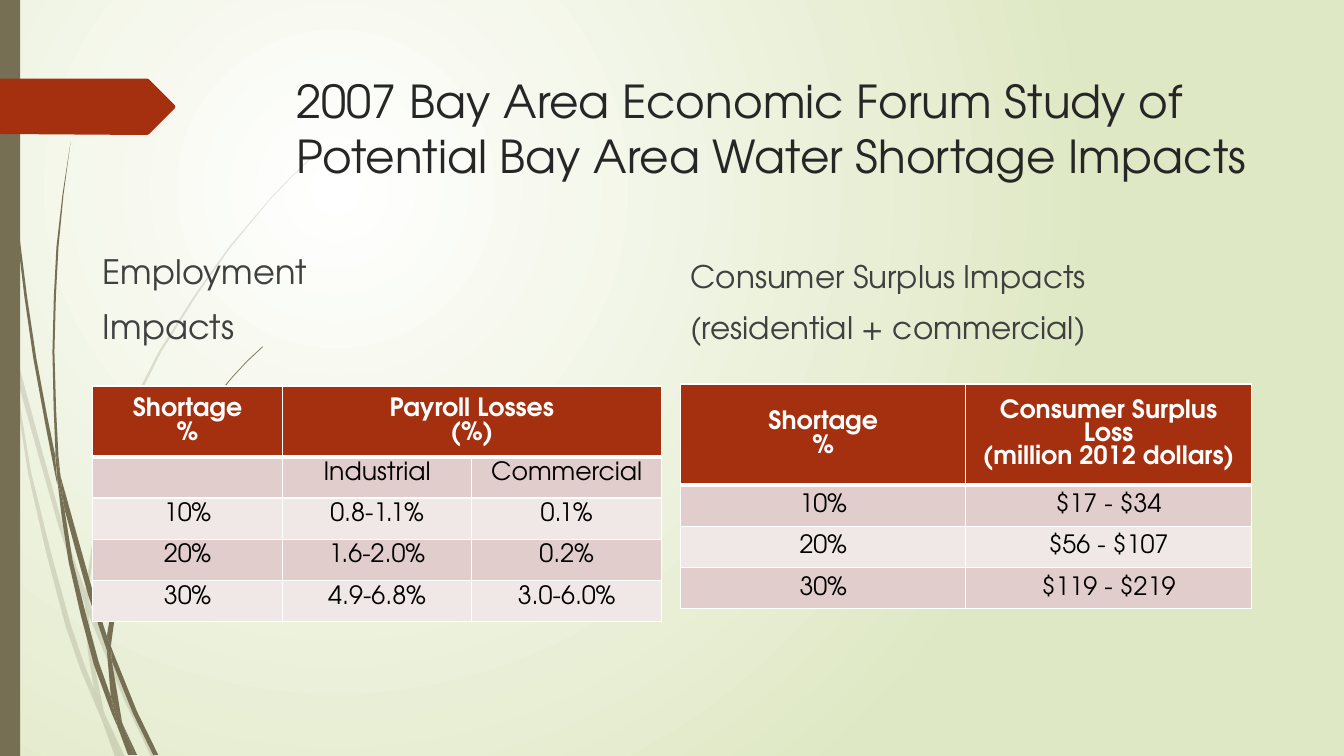
from dataclasses import dataclass
from lxml.etree import SubElement
from pptx import Presentation
from pptx.dml.color import RGBColor
from pptx.enum.text import MSO_ANCHOR, MSO_AUTO_SIZE, PP_ALIGN
from pptx.enum.shapes import MSO_SHAPE
from pptx.oxml import parse_xml
from pptx.oxml.ns import nsdecls, qn
from pptx.slide import Slide
from pptx.text.text import TextFrame
from pptx.util import Inches, Pt

FONT = "TeX Gyre Adventor"
WHITE = RGBColor(0xFF, 0xFF, 0xFF)
BLACK = RGBColor(0, 0, 0)
PALE_GREEN = RGBColor(0xDF, 0xE8, 0xC4)
OLIVE = RGBColor(0x76, 0x6F, 0x54)
RUST = RGBColor(0xA5, 0x30, 0x10)
TITLE_GRAY = RGBColor(0x26, 0x26, 0x26)
TEXT_GRAY = RGBColor(0x40, 0x40, 0x40)
BANDS = (RGBColor(0xF0, 0xE8, 0xE7), RGBColor(0xE1, 0xCD, 0xCC))

Point = tuple[float, float]


@dataclass
class Strand:
    """A grass piece: one edge out, the other edge back."""
    out: list[Point]
    back: list[Point]


@dataclass
class Panel:
    """A heading with the table below it."""
    heading: list[str]
    heading_size: float
    left: float
    top: float
    column_width: float
    header_height: float
    body_anchor: MSO_ANCHOR
    rows: list[list[str]]
    merge_last_headers: bool = False


FAINT_STRANDS = [
    Strand([(0.11, 3.5), (0.09, 3.22), (0, 2.82)], [(0, 2.99), (0.1, 3.44)]),
    Strand([(0.17, 3.76), (0.58, 5.22), (0.84, 5.99)], [(0.85, 5.86), (0.62, 5.2), (0.14, 3.45)]),
    Strand([(0.88, 6.1), (1.23, 6.94), (1.5, 7.51)],
           [(1.55, 7.51), (1.27, 6.92), (0.92, 6.07), (0.88, 5.96)]),
    Strand([(1.05, 7.11), (1.19, 7.51)], [(1.24, 7.51)]),
    Strand([(0.11, 3.5), (0.28, 4.7), (0.65, 6.21), (0.92, 6.93), (1.01, 7.14)],
           [(0.99, 7.07), (0.93, 6.83), (0.7, 6.19), (0.31, 4.69), (0.17, 3.76)]),
    Strand([(0.84, 5.99), (0.87, 6.46), (0.93, 6.83), (0.96, 6.92), (1.05, 7.11)],
           [(1.03, 7.06), (0.91, 6.46), (0.88, 6.1), (0.88, 6.08)]),
    Strand([(0.88, 5.96), (0.88, 5.84), (1.1, 4.62), (1.6, 3.49), (2.29, 2.45), (2.68, 1.98),
            (2.9, 1.75), (3.12, 1.54)],
           [(3.12, 1.53), (2.89, 1.75), (2.68, 1.97), (2.28, 2.44), (1.58, 3.48), (1.07, 4.61),
            (0.85, 5.84), (0.85, 5.86)]),
    Strand([(1.01, 7.14), (1.14, 7.51)], [(1.19, 7.51)]),
    Strand([(0.88, 6.08), (0.88, 6.1), (0.88, 5.96)], [(0.85, 5.86), (0.84, 5.99)]),
    Strand([(0.93, 6.83), (0.99, 7.07), (1.01, 7.14), (1.19, 7.51)], [(1.05, 7.11), (0.96, 6.92)]),
]
SOLID_STRANDS = [
    Strand([(0.04, 0), (0.05, 0.48), (0.08, 1.09), (0.19, 2.32), (0.36, 3.55), (0.55, 4.53),
            (0.55, 4.57), (0.57, 4.81)],
           [(0.56, 4.77), (0.33, 3.55), (0.17, 2.33), (0.07, 1.1), (0.04, 0.48), (0.03, 0)]),
    Strand([(0.64, 5.05), (0.88, 5.92), (1.06, 6.45)],
           [(1.06, 6.33), (1.06, 6.31), (0.93, 5.9), (0.6, 4.72)]),
    Strand([(1.1, 6.41), (1.11, 6.56), (1.32, 7.08), (1.52, 7.49)],
           [(1.57, 7.49), (1.36, 7.06), (1.13, 6.49)]),
    Strand([(0.57, 4.77), (0.68, 5.57), (0.93, 6.59), (1.11, 7.08), (1.17, 7.22)],
           [(1.16, 7.17), (1.1, 6.91), (0.98, 6.57), (0.72, 5.56), (0.64, 5.05)]),
    Strand([(0.6, 4.72), (0.58, 4.53), (0.54, 3.49), (0.58, 2.45), (0.63, 1.93), (0.7, 1.41)],
           [(0.7, 1.41), (0.62, 1.93), (0.56, 2.45), (0.52, 3.49), (0.55, 4.49)]),
    Strand([(1.22, 7.19), (1.33, 7.49)], [(1.36, 7.49)]),
    Strand([(0.55, 4.49), (0.55, 4.53), (0.57, 4.77), (0.64, 5.05)], [(0.6, 4.72)]),
    Strand([(1.1, 6.41), (1.11, 6.33), (1.25, 5.52), (1.58, 4.76), (2.05, 4.06), (2.31, 3.74),
            (2.45, 3.59), (2.61, 3.44)],
           [(2.6, 3.44), (2.45, 3.58), (2.31, 3.73), (2.04, 4.05), (1.56, 4.74), (1.22, 5.51),
            (1.06, 6.31)]),
    Strand([(1.17, 7.22), (1.27, 7.49)], [(1.31, 7.49)]),
    Strand([(1.06, 6.45), (1.1, 6.91), (1.16, 7.06), (1.22, 7.19)],
           [(1.21, 7.16), (1.11, 6.56), (1.09, 6.51)]),
    Strand([(1.06, 6.45), (1.09, 6.51), (1.11, 6.56)], [(1.1, 6.41), (1.06, 6.31)]),
    Strand([(1.1, 6.91), (1.16, 7.17), (1.17, 7.22), (1.3, 7.49)],
           [(1.33, 7.49), (1.22, 7.19), (1.16, 7.06)]),
]
ARROW_TAB = [(0, 0.78), (1.46, 0.78), (1.48, 0.79), (1.73, 1.04), (1.74, 1.06), (1.73, 1.08),
             (1.48, 1.33), (1.46, 1.34), (0, 1.33)]
PANELS = [
    Panel(["Employment", "Impacts"], 24, 0.92, 3.83, 1.88, 0.56, MSO_ANCHOR.TOP,
          [["Shortage\n%", "Payroll Losses\n(%)", ""],
           ["", "Industrial", "Commercial"],
           ["10%", "0.8-1.1%", "0.1%"],
           ["20%", "1.6-2.0%", "0.2%"],
           ["30%", "4.9-6.8%", "3.0-6.0%"]], merge_last_headers=True),
    Panel(["Consumer Surplus Impacts", "(residential + commercial)"], 22.2, 6.75, 3.81, 2.83, 0.79,
          MSO_ANCHOR.MIDDLE,
          [["Shortage\n%", "Consumer Surplus Loss\n(million 2012 dollars)"],
           ["10%", "$17 - $34"],
           ["20%", "$56 - $107"],
           ["30%", "$119 - $219"]]),
]


def write_text(frame: TextFrame, lines: list[str], *, size: float, color: RGBColor,
               bold: bool = False, align: PP_ALIGN = PP_ALIGN.LEFT,
               anchor: MSO_ANCHOR = MSO_ANCHOR.TOP, space_before: float = 0) -> None:
    frame.text = "\n".join(lines)
    frame.word_wrap = True
    frame.vertical_anchor = anchor
    for paragraph in frame.paragraphs:
        paragraph.alignment = align
        paragraph.space_before = Pt(space_before)
        for font in [paragraph.font, *(run.font for run in paragraph.runs)]:
            font.name, font.size, font.bold = FONT, Pt(size), bold
            font.color.rgb = color


def smooth(points: list[Point]) -> list[Point]:
    """Add Catmull-Rom midpoints between points that lie far apart."""
    padded = [points[0], *points, points[-1]]
    curve = [points[0]]
    for a, b, c, d in zip(padded, padded[1:], padded[2:], padded[3:]):
        if abs(c[1] - b[1]) > 0.6:
            x, y = ((9 * (q + r) - p - s) / 16 for p, q, r, s in zip(a, b, c, d))
            curve.append((x, y))
        curve.append(c)
    return curve


def draw_outline(slide: Slide, points: list[Point], color: RGBColor, opacity: int = 100) -> None:
    start, *others = [(Inches(x), Inches(y)) for x, y in points]
    builder = slide.shapes.build_freeform(*start)
    builder.add_line_segments(others, close=True)
    shape = builder.convert_to_shape()
    shape.shadow.inherit = False
    shape.fill.solid()
    shape.fill.fore_color.rgb = color
    shape.line.fill.background()
    if opacity < 100:
        fill_color = shape.element.spPr.xpath(".//a:srgbClr")[0]
        SubElement(fill_color, qn("a:alpha"), val=str(opacity * 1000))


def set_borders(cell, widths: dict[str, int]) -> None:
    properties = cell._tc.get_or_add_tcPr()
    for index, (side, width) in enumerate(widths.items()):
        properties.insert(index, parse_xml(
            f'<a:ln{side} {nsdecls("a")} w="{Pt(width)}"><a:solidFill>'
            f'<a:srgbClr val="{WHITE}"/></a:solidFill></a:ln{side}>'))


def draw_panel(slide: Slide, panel: Panel) -> None:
    column_count = len(panel.rows[0])
    width = Inches(panel.column_width * column_count)
    heading = slide.shapes.add_textbox(Inches(panel.left), Inches(2.58), width, Inches(0.9))
    write_text(heading.text_frame, panel.heading, size=panel.heading_size, color=TEXT_GRAY,
               anchor=MSO_ANCHOR.BOTTOM, space_before=10)

    heights = [panel.header_height] + [0.41] * (len(panel.rows) - 1)
    table = slide.shapes.add_table(len(heights), column_count, Inches(panel.left),
                                   Inches(panel.top), width, Inches(sum(heights))).table
    for column in table.columns:
        column.width = Inches(panel.column_width)
    for row_index, (height, texts) in enumerate(zip(heights, panel.rows)):
        table.rows[row_index].height = Inches(height)
        is_header = row_index == 0
        for column_index, text in enumerate(texts):
            cell = table.cell(row_index, column_index)
            write_text(cell.text_frame, [text], size=18, color=WHITE if is_header else BLACK,
                       bold=is_header, align=PP_ALIGN.CENTER)
            cell.vertical_anchor = MSO_ANCHOR.MIDDLE if is_header else panel.body_anchor
            cell.fill.solid()
            cell.fill.fore_color.rgb = RUST if is_header else BANDS[row_index % 2]
            set_borders(cell, {"L": 1, "R": 1, "T": 3 if row_index == 1 else 1,
                               "B": 3 if is_header else 1})
    if panel.merge_last_headers:
        table.cell(0, column_count - 2).merge(table.cell(0, column_count - 1))


def main() -> None:
    presentation = Presentation()
    presentation.slide_width, presentation.slide_height = Inches(13.33), Inches(7.5)
    slide = presentation.slides.add_slide(presentation.slide_layouts[5])

    # Background: white glow fading to pale green
    fill = slide.background.fill
    fill.gradient()
    for stop, color in zip(fill.gradient_stops, (WHITE, PALE_GREEN)):
        stop.color.rgb = color
    linear = slide.element.xpath(".//p:bg//a:lin")[0]
    linear.getparent().replace(linear, parse_xml(
        f'<a:path {nsdecls("a")} path="circle">'
        '<a:fillToRect l="50000" t="50000" r="100000" b="100000"/></a:path>'))

    # Grass, side bar and arrow tab
    for strands, opacity in ((FAINT_STRANDS, 20), (SOLID_STRANDS, 100)):
        for strand in strands:
            draw_outline(slide, smooth(strand.out) + smooth(strand.back), OLIVE, opacity)
    bar = slide.shapes.add_shape(MSO_SHAPE.RECTANGLE, 0, 0, Inches(0.2), Inches(7.5))
    bar.shadow.inherit = False
    bar.fill.solid()
    bar.fill.fore_color.rgb = OLIVE
    bar.line.fill.background()
    draw_outline(slide, ARROW_TAB, RUST)

    # Title, in front of the decoration
    title = slide.shapes.title
    title.left, title.top, title.width, title.height = map(Inches, (2.84, 0.68, 9.75, 1.4))
    write_text(title.text_frame, ["2007 Bay Area Economic Forum Study of Potential Bay Area "
                                  "Water Shortage Impacts"], size=32.4, color=TITLE_GRAY)
    title.text_frame.auto_size = MSO_AUTO_SIZE.NONE
    slide.shapes.element.append(title.element)

    # Headings and tables
    for panel in PANELS:
        draw_panel(slide, panel)
    presentation.save("out.pptx")


if __name__ == "__main__":
    main()
